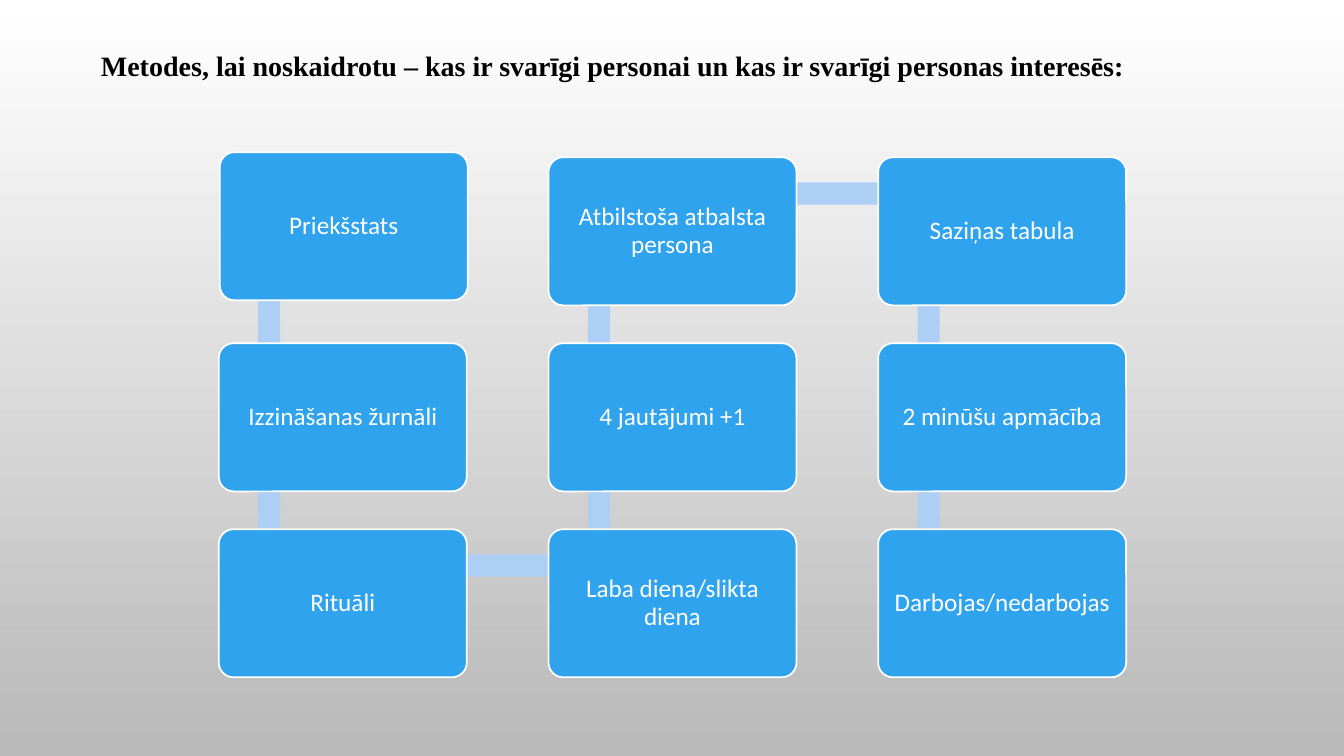
"""Builds a slide with a winding chain of nine method cards."""
from dataclasses import dataclass
from itertools import pairwise

from pptx import Presentation
from pptx.dml.color import RGBColor
from pptx.enum.shapes import MSO_SHAPE
from pptx.enum.text import MSO_ANCHOR, PP_ALIGN
from pptx.util import Inches, Pt

BAR = MSO_SHAPE.RECTANGLE
CARD = MSO_SHAPE.ROUNDED_RECTANGLE
MIDDLE = MSO_ANCHOR.MIDDLE
LEFT, CENTER = PP_ALIGN.LEFT, PP_ALIGN.CENTER
TITLE_ONLY = 5


@dataclass(frozen=True)
class Theme:
    """Colours, fonts and type sizes of the slide."""
    backdrop_top: RGBColor = RGBColor(0xFF, 0xFF, 0xFF)
    backdrop_bottom: RGBColor = RGBColor(0xB9, 0xB9, 0xB9)
    card: RGBColor = RGBColor(0x2F, 0xA3, 0xEE)
    link: RGBColor = RGBColor(0xAD, 0xCE, 0xF5)
    title_text: RGBColor = RGBColor(0, 0, 0)
    card_text: RGBColor = RGBColor(0xFF, 0xFF, 0xFF)
    title_font: str = "Times New Roman"
    card_font: str = "Calibri"
    title_size: int = 20
    card_size: int = 18


THEME = Theme()
SLIDE_WIDTH, SLIDE_HEIGHT = 13.33, 7.5
TITLE = "Metodes, lai noskaidrotu – kas ir svarīgi personai un kas ir svarīgi personas interesēs:"
GRID_LEFT, GRID_TOP = 2.17, 1.56
COLUMN_STEP, ROW_STEP = 3.27, 1.845
CARD_WIDTH, CARD_HEIGHT = 2.46, 1.47
LINK_THICKNESS = 0.22
LINK_INSET_X, LINK_INSET_Y = 0.5, 0.36
FIRST_CARD_SHIFT = (0.01, -0.05)
METHODS = [
    ("Priekšstats", 0, 0),
    ("Izzināšanas žurnāli", 0, 1),
    ("Rituāli", 0, 2),
    ("Laba diena/slikta diena", 1, 2),
    ("4 jautājumi +1", 1, 1),
    ("Atbilstoša atbalsta persona", 1, 0),
    ("Saziņas tabula", 2, 0),
    ("2 minūšu apmācība", 2, 1),
    ("Darbojas/nedarbojas", 2, 2),
]


def grid_point(column, row):
    """Return the top left corner of a grid cell in inches."""
    return GRID_LEFT + column * COLUMN_STEP, GRID_TOP + row * ROW_STEP


def paint_background(slide):
    """Fill the slide with a gradient running from top to bottom."""
    fill = slide.background.fill
    fill.gradient()
    fill.gradient_angle = 270
    top, bottom = fill.gradient_stops
    top.color.rgb = THEME.backdrop_top
    bottom.color.rgb = THEME.backdrop_bottom


def write(frame, words, align, font_name, size, color, bold=False):
    """Put one vertically centred paragraph into a text frame."""
    frame.text = words
    frame.word_wrap = True
    frame.vertical_anchor = MIDDLE
    paragraph = frame.paragraphs[0]
    paragraph.alignment = align
    paragraph.line_spacing = 0.9
    font = paragraph.runs[0].font
    font.name, font.size, font.bold = font_name, Pt(size), bold
    font.color.rgb = color


def add_title(slide):
    """Place and format the title placeholder."""
    title = slide.shapes.title
    title.left, title.top = Inches(0.9), Inches(0.37)
    title.width, title.height = Inches(11.44), Inches(0.59)
    write(title.text_frame, TITLE, LEFT, THEME.title_font,
          THEME.title_size, THEME.title_text, bold=True)


def add_block(slide, preset, left, top, width, height, color):
    """Add a flat filled shape without outline."""
    block = slide.shapes.add_shape(
        preset, Inches(left), Inches(top), Inches(width), Inches(height))
    block.shadow.inherit = False
    block.fill.solid()
    block.fill.fore_color.rgb = color
    block.line.fill.background()
    return block


def add_link(slide, start, end):
    """Join two neighbouring grid cells with a bar."""
    (x1, y1), (x2, y2) = grid_point(*start), grid_point(*end)
    half = LINK_THICKNESS / 2
    left = min(x1, x2) + LINK_INSET_X - (half if x1 == x2 else 0)
    top = min(y1, y2) + LINK_INSET_Y - (half if y1 == y2 else 0)
    add_block(slide, BAR, left, top, abs(x2 - x1) or LINK_THICKNESS,
              abs(y2 - y1) or LINK_THICKNESS, THEME.link)


def add_card(slide, method, column, row, shift=(0, 0)):
    """Add a rounded card that names one method."""
    left, top = grid_point(column, row)
    card = add_block(slide, CARD, left + shift[0], top + shift[1],
                     CARD_WIDTH, CARD_HEIGHT, THEME.card)
    card.adjustments[0] = 0.1
    card.line.color.rgb = THEME.card_text
    card.line.width = Pt(1.25)
    frame = card.text_frame
    frame.margin_left = frame.margin_right = Inches(0.07)
    frame.margin_top = frame.margin_bottom = Inches(0.07)
    write(frame, method, CENTER, THEME.card_font, THEME.card_size, THEME.card_text)


def main():
    """Build and save the slide."""
    deck = Presentation()
    deck.slide_width, deck.slide_height = Inches(SLIDE_WIDTH), Inches(SLIDE_HEIGHT)
    slide = deck.slides.add_slide(deck.slide_layouts[TITLE_ONLY])
    paint_background(slide)
    add_title(slide)
    for (_, *start), (_, *end) in pairwise(METHODS):
        add_link(slide, start, end)
    first, *others = METHODS
    add_card(slide, *first, shift=FIRST_CARD_SHIFT)
    for method in others:
        add_card(slide, *method)
    deck.save("out.pptx")


if __name__ == "__main__":
    main()
